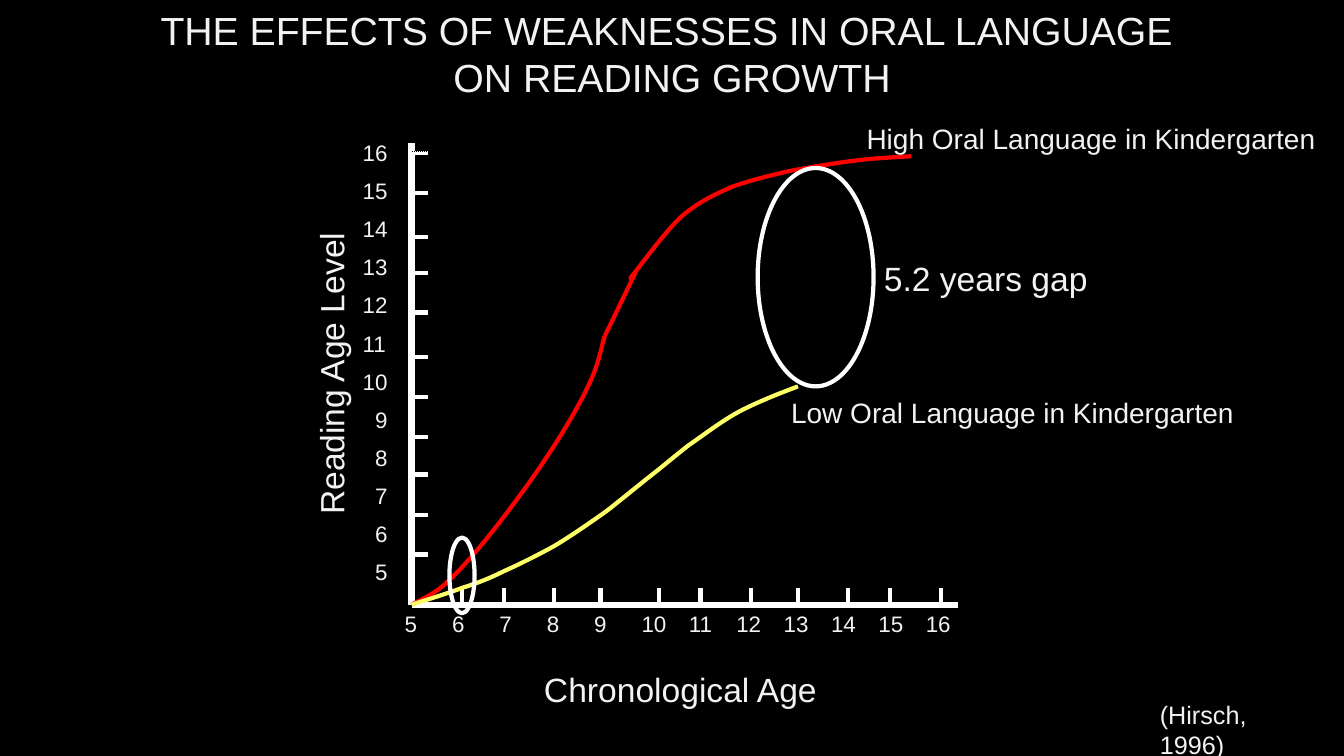
from lxml import etree
from pptx import Presentation
from pptx.dml.color import RGBColor
from pptx.enum.dml import MSO_LINE
from pptx.enum.shapes import MSO_CONNECTOR, MSO_SHAPE
from pptx.enum.text import PP_ALIGN
from pptx.oxml.ns import qn
from pptx.util import Inches, Pt

LEFT, MID = PP_ALIGN.LEFT, PP_ALIGN.CENTER
LINE, OVAL = MSO_CONNECTOR.STRAIGHT, MSO_SHAPE.OVAL
DOTS = MSO_LINE.ROUND_DOT
COLORS = {"back": "000000", "text": "F2F2F2", "axis": "FFFFFF",
          "high": "FF0000", "low": "FFFF66"}
FONT = "Arial"

# Grid of 160 columns by 90 rows, twelve cells to the inch
COLS, ROWS = 160, 90
ZERO_X, ZERO_Y = 49, 72
TICK = 2
X_TICKS = [55, 60, 66, 71.5, 78.5, 83.4, 89.4, 95, 101, 106, 112]
Y_TICKS = [18.2, 23, 28.2, 32.5, 37.2, 42.5, 47.3, 52, 56.5, 61.3, 66]
AGES = [str(age) for age in range(5, 17)]
X_STEP = 5.64
DIGIT = 1.48

# Each curve: colour, then its start and Bezier arcs (two controls and an end)
CURVES = [
    ("high", [
        (72, 40),
        (71.5, 41.6), (71.3, 43.4), (70, 46),
        (68.8, 48.6), (66.6, 52.2), (64.5, 55.3),
        (62.4, 58.4), (59.3, 62.5), (57.3, 64.9),
        (55.3, 67.3), (54.1, 68.5), (52.8, 69.7),
        (51.4, 70.9), (49.8, 71.5), (49, 72)]),
    ("high", [
        (72, 40),
        (72.6, 38.8), (74.9, 34), (75.5, 32.8),
        (76.1, 31.6), (74.4, 34), (75.3, 32.8),
        (76.2, 31.7), (79.1, 27.7), (81, 25.9),
        (82.9, 24.2), (84.8, 23.3), (87, 22.3),
        (89.2, 21.5), (91.3, 21), (93.8, 20.4),
        (96.4, 19.9), (99.6, 19.4), (102, 19.1),
        (104.4, 18.8), (107.2, 18.7), (108.5, 18.6)]),
    ("low", [
        (72, 61),
        (70, 62.4), (68, 63.8), (66, 65),
        (64, 66.1), (61.8, 67.2), (60, 68),
        (58.2, 68.9), (56.9, 69.4), (55, 70),
        (53.2, 70.7), (51.1, 71.3), (49, 72)]),
    ("low", [
        (95, 46),
        (92.6, 46.9), (90.1, 47.9), (88, 49),
        (85.8, 50.2), (83.9, 51.7), (82, 53),
        (80.2, 54.4), (78.7, 55.7), (77, 57),
        (75.4, 58.3), (72.8, 60.4), (72, 61)]),
]


def cell(count):
    return Inches(count / 12)


def color(name):
    return RGBColor.from_string(COLORS[name])


def add_text(slide, box, lines, size, align=LEFT):
    shape = slide.shapes.add_textbox(*map(cell, box))
    frame = shape.text_frame
    frame.word_wrap = True
    frame.text = "\n".join(lines)
    for para in frame.paragraphs:
        para.alignment = align
        for run in para.runs:
            run.font.size = Pt(size)
            run.font.name = FONT
            run.font.color.rgb = color("text")
    return shape


def add_tabs(para, step, count):
    props = para._p.get_or_add_pPr()
    tabs = etree.SubElement(props, qn("a:tabLst"))
    for stop in range(1, count + 1):
        etree.SubElement(tabs, qn("a:tab"), pos=str(cell(step * stop)), algn="l")


def add_line(slide, start, end, width, name="axis"):
    line = slide.shapes.add_connector(LINE, *map(cell, start + end))
    line.line.color.rgb = color(name)
    line.line.width = Pt(width)
    etree.SubElement(line._element.spPr, qn("a:effectLst"))
    return line


def outline(shape, name):
    shape.shadow.inherit = False
    shape.fill.background()
    shape.line.color.rgb = color(name)
    shape.line.width = Pt(3)


def add_oval(slide, box):
    outline(slide.shapes.add_shape(OVAL, *map(cell, box)), "axis")


def add_curve(slide, name, points):
    spots = [(cell(x), cell(y)) for x, y in points]
    pen = slide.shapes.build_freeform(*spots[0])
    pen.add_line_segments(spots[1:], close=False)
    shape = pen.convert_to_shape()
    # Turn every three straight segments into one Bezier arc
    legs = list(shape._element.iter(qn("a:lnTo")))
    for first in range(0, len(legs), 3):
        arc = etree.Element(qn("a:cubicBezTo"))
        legs[first].addprevious(arc)
        for leg in legs[first:first + 3]:
            arc.append(leg[0])
            leg.getparent().remove(leg)
    outline(shape, name)


def add_axes(slide):
    add_line(slide, (ZERO_X, 17), (ZERO_X, ZERO_Y), 4.5)
    add_line(slide, (ZERO_X, ZERO_Y), (114, ZERO_Y), 4.5)
    for x in X_TICKS:
        add_line(slide, (x, ZERO_Y - TICK), (x, ZERO_Y), 3)
    for y in Y_TICKS:
        add_line(slide, (ZERO_X, y), (ZERO_X + TICK, y), 3)
    # Dotted level line, dark where it crosses the axis
    level = add_line(slide, (ZERO_X, 18), (123, 18), 0.75, "back")
    level.line.dash_style = DOTS

    # Age numbers
    ages = add_text(slide, (47, 72, 72, 4.4), ["\t".join(AGES)], 16)
    add_tabs(ages.text_frame.paragraphs[0], X_STEP, len(AGES) - 1)
    levels = add_text(slide, (42, 16, 6, 57.4), AGES[::-1], 16)
    for row, para in enumerate(levels.text_frame.paragraphs):
        if row:
            para.space_before = Pt(8)
        if len(para.text) == 1:
            para._p.get_or_add_pPr().set("marL", str(cell(DIGIT)))

    # Axis names
    name = add_text(slide, (11.9, 41.5, 55, 6), ["Reading Age Level"], 24, MID)
    name.rotation = 270
    add_text(slide, (48, 79, 66, 6), ["Chronological Age"], 24, MID)


def main():
    deck = Presentation()
    deck.slide_width, deck.slide_height = cell(COLS), cell(ROWS)
    slide = deck.slides.add_slide(deck.slide_layouts[6])
    slide.background.fill.solid()
    slide.background.fill.fore_color.rgb = color("back")

    add_text(slide, (0, 0.2, COLS, 12.5),
             ["THE EFFECTS OF WEAKNESSES IN ORAL LANGUAGE ",
              "ON READING GROWTH"], 28, MID)
    add_axes(slide)
    for name, points in CURVES:
        add_curve(slide, name, points)

    # Curve names
    add_text(slide, (93, 46.5, 65, 5.3),
             ["Low Oral Language in Kindergarten"], 20)
    add_text(slide, (99.8, 13.85, 60.2, 5.3),
             ["High Oral Language in Kindergarten"], 20, MID)

    # Gap between the curves, early and late
    add_oval(slide, (53.5, 64, 3, 9))
    add_text(slide, (104.05, 30.17, 30.1, 6), ["5.2 years gap"], 24)
    add_oval(slide, (90.2, 20, 13.8, 26))

    # Citation
    add_text(slide, (136.9, 82.65, 21.1, 4.8), ["(Hirsch, 1996)"], 18)
    deck.save("out.pptx")


if __name__ == "__main__":
    main()
